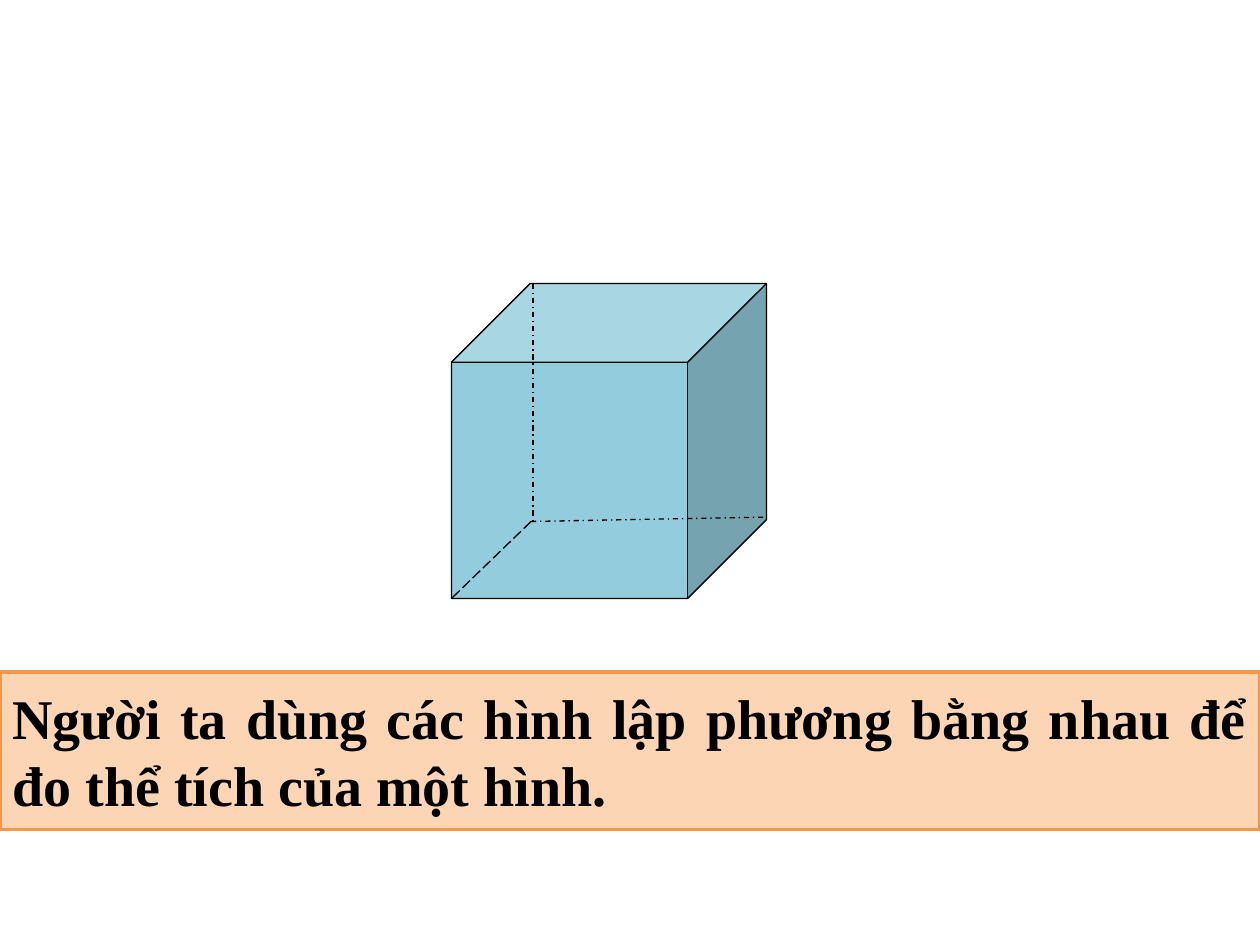
from pptx import Presentation
from pptx.dml.color import RGBColor
from pptx.enum import dml, shapes, text
from pptx.oxml.ns import qn
from pptx.util import Pt
from lxml import etree

COLORS = {
    "cube": "93CDDD",
    "edge": "000000",
    "banner": "FCD5B5",
    "banner_border": "F79646",
    "statement": "000000",
}
STATEMENT = "Người ta dùng các hình lập phương bằng nhau để đo thể tích của một hình."


def color(name):
    return RGBColor.from_string(COLORS[name])


def style_line(line, name, width, dash=None):
    line.color.rgb = color(name)
    line.width = Pt(width)
    if dash is not None:
        line.dash_style = dash


def add_box(parent, preset, box, fill, border, width):
    box_shape = parent.add_shape(preset, *(Pt(v) for v in box))
    box_shape.shadow.inherit = False
    box_shape.fill.solid()
    box_shape.fill.fore_color.rgb = color(fill)
    style_line(box_shape.line, border, width)
    return box_shape


def add_cube(slide, left, top, size):
    """Solid cube with its three hidden edges dashed, grouped together."""
    group = slide.shapes.add_group_shape().shapes
    cube = add_box(group, shapes.MSO_SHAPE.CUBE, (left, top, size, size),
                   "cube", "edge", 0.75)
    cube.adjustments[0] = 0.25

    back_corner = (45.5, 136)
    dash_dot = dml.MSO_LINE.DASH_DOT
    hidden_edges = [
        ((46.5, 0), (46.5, 135), dash_dot),
        (back_corner, (0, size), dml.MSO_LINE.LONG_DASH),
        (back_corner, (size, 133.5), dash_dot),
    ]
    for (x1, y1), (x2, y2), dash in hidden_edges:
        edge = group.add_connector(
            shapes.MSO_CONNECTOR.STRAIGHT,
            Pt(left + x1), Pt(top + y1), Pt(left + x2), Pt(top + y2))
        style_line(edge.line, "edge", 0.75, dash)
        etree.SubElement(edge._element.spPr, qn("a:effectLst"))


def add_banner(slide, left, top, width, height):
    banner = add_box(slide.shapes, shapes.MSO_SHAPE.RECTANGLE,
                     (left, top, width, height), "banner", "banner_border", 2)
    frame = banner.text_frame
    frame.word_wrap = True
    frame.vertical_anchor = text.MSO_ANCHOR.MIDDLE
    frame.text = STATEMENT
    statement = frame.paragraphs[0]
    statement.alignment = text.PP_ALIGN.JUSTIFY
    font = statement.runs[0].font
    font.name = "Times New Roman"
    font.size = Pt(32)
    font.bold = True
    font.color.rgb = color("statement")


def main():
    deck = Presentation()
    deck.slide_width, deck.slide_height = Pt(720), Pt(540)
    slide = deck.slides.add_slide(deck.slide_layouts[6])
    add_cube(slide, 258, 162, 180)
    add_banner(slide, 0, 384, 720, 90)
    deck.save("out.pptx")


if __name__ == "__main__":
    main()
